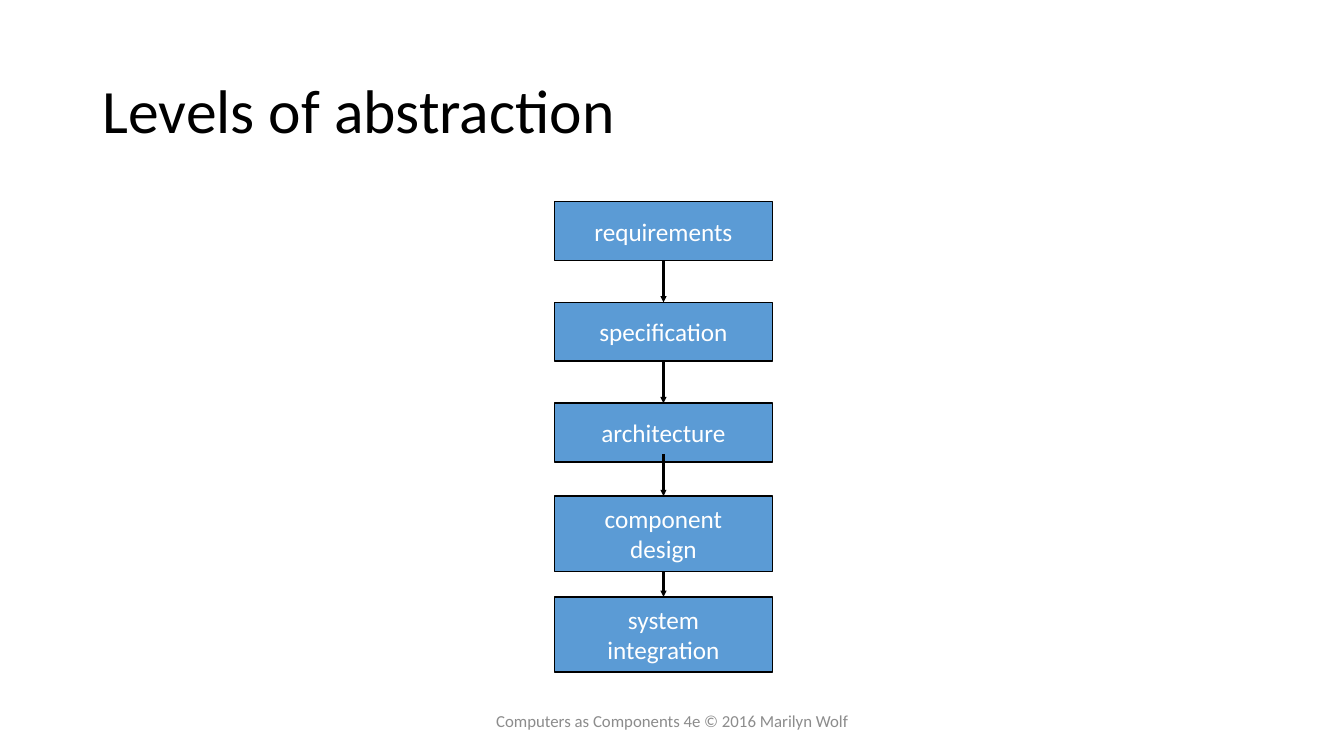
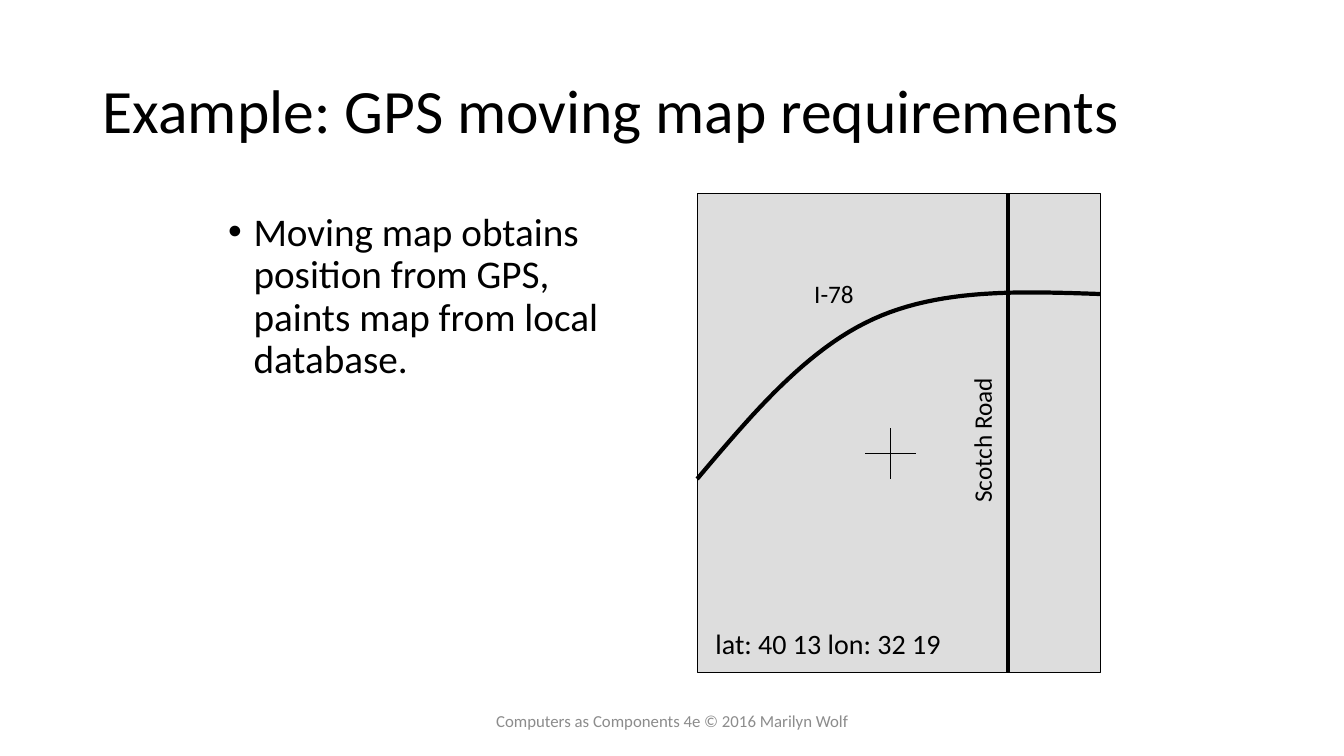
from dataclasses import dataclass

from lxml import etree
from pptx import Presentation
from pptx.dml.color import RGBColor
from pptx.enum.shapes import MSO_CONNECTOR, MSO_SHAPE
from pptx.enum.text import MSO_ANCHOR, MSO_AUTO_SIZE, PP_ALIGN
from pptx.oxml.ns import qn
from pptx.util import Cm, Pt

LEFT, MID = PP_ALIGN.LEFT, PP_ALIGN.CENTER
TOP, CORE = MSO_ANCHOR.TOP, MSO_ANCHOR.MIDDLE
FIT, FIXED = MSO_AUTO_SIZE.SHAPE_TO_FIT_TEXT, MSO_AUTO_SIZE.NONE
RECT, LINE = MSO_SHAPE.RECTANGLE, MSO_CONNECTOR.STRAIGHT

# Shared style
FONT = "Calibri"
BLACK, WHITE, BLUE, PALE, GREY = "000000", "FFFFFF", "5B9BD5", "DDDDDD", "8C8C8C"
FOOT = "Computers as Components 4e © 2016 Marilyn Wolf"


@dataclass
class Box:
    x: float
    y: float
    w: float
    h: float

    def cm(self) -> tuple:
        return Cm(self.x), Cm(self.y), Cm(self.w), Cm(self.h)


@dataclass
class Step:
    text: str
    top: float
    high: float
    run: float = 0  # length of the arrow that ends at this step


@dataclass
class Label:
    text: str
    box: Box
    size: int = 18
    turn: int = 0


TITLE = Box(2.34, 1.02, 29.21, 3.68)
BASE = Box(11.23, 17.65, 11.43, 1.02)


def paint(form, tint: str) -> None:
    """Give a fill or font colour format a solid colour."""
    form.rgb = RGBColor.from_string(tint)


def stroke(shape, width: float) -> None:
    paint(shape.line.color, BLACK)
    shape.line.width = Pt(width)


def write(shape, text: str, size: int, tint: str = BLACK, align=LEFT,
          anchor=TOP, wrap: bool = True, fit=FIXED, lead: float = 1.0,
          gap: int = 0, mark: str = "") -> None:
    """Set one paragraph per line of text."""
    frame = shape.text_frame
    frame.word_wrap, frame.auto_size, frame.vertical_anchor = wrap, fit, anchor
    for num, part in enumerate(text.split("\n")):
        para = frame.add_paragraph() if num else frame.paragraphs[0]
        para.alignment, para.line_spacing, para.space_before = align, lead, Pt(gap)
        run = para.add_run()
        run.text = part
        run.font.name, run.font.size = FONT, Pt(size)
        paint(run.font.color, tint)
        if mark:
            props = para._p.get_or_add_pPr()
            props.set("marL", str(Cm(0.64)))
            props.set("indent", str(Cm(-0.64)))
            font = etree.SubElement(props, qn("a:buFont"))
            font.set("typeface", "Arial")
            etree.SubElement(props, qn("a:buChar")).set("char", mark)


def note(slide, box: Box, text: str, size: int, turn: int = 0, **form) -> None:
    shape = slide.shapes.add_textbox(*box.cm())
    shape.rotation = turn
    write(shape, text, size, **form)


def block(slide, box: Box, fill: str, width: float):
    shape = slide.shapes.add_shape(RECT, *box.cm())
    shape.shadow.inherit = False
    shape.fill.solid()
    paint(shape.fill.fore_color, fill)
    stroke(shape, width)
    return shape


def rule(slide, x1: float, y1: float, x2: float, y2: float,
         width: float, arrow: bool = False) -> None:
    line = slide.shapes.add_connector(LINE, Cm(x1), Cm(y1), Cm(x2), Cm(y2))
    stroke(line, width)
    if arrow:
        tip = etree.SubElement(line.line._get_or_add_ln(), qn("a:tailEnd"))
        for key, val in (("type", "triangle"), ("w", "sm"), ("len", "sm")):
            tip.set(key, val)
    etree.SubElement(line._element.spPr, qn("a:effectLst"))


def curve(slide, start: tuple, bends: list, width: float, steps: int = 24) -> None:
    """Draw joined cubic curves, each bend being two handles and an end."""
    dots, a = [], start
    for b, c, d in bends:
        for num in range(1, steps + 1):
            t = num / steps
            u = 1 - t
            dots.append(tuple(
                Cm(u**3 * p + 3 * u * u * t * q + 3 * u * t * t * r + t**3 * s)
                for p, q, r, s in zip(a, b, c, d)))
        a = d
    path = slide.shapes.build_freeform(Cm(start[0]), Cm(start[1]))
    path.add_line_segments(dots, close=False)
    shape = path.convert_to_shape()
    shape.shadow.inherit = False
    shape.fill.background()
    stroke(shape, width)


def page(deck, title: str):
    """Add a slide with the shared title and footer."""
    slide = deck.slides.add_slide(deck.slide_layouts[6])
    note(slide, TITLE, title, 44, anchor=CORE, lead=0.9)
    note(slide, BASE, FOOT, 12, tint=GREY, align=MID, anchor=CORE)
    return slide


def levels(deck) -> None:
    slide = page(deck, "Levels of abstraction")
    left, wide = 13.97, 5.5
    steps = [
        Step("requirements", 5.08, 1.48),
        Step("specification", 7.62, 1.48, 1.06),
        Step("architecture", 10.16, 1.48, 1.06),
        Step("component\ndesign", 12.5, 1.9, 1.06),
        Step("system\nintegration", 15.04, 1.9, 0.64),
    ]
    for step in steps:
        shape = block(slide, Box(left, step.top, wide, step.high), BLUE, 1)
        write(shape, step.text, 18, tint=WHITE, align=MID, anchor=CORE, wrap=False)
    # Arrows lie over the boxes
    mid = left + wide / 2
    for step in steps[1:]:
        rule(slide, mid, step.top - step.run, mid, step.top, 2.25, arrow=True)


def map_page(deck) -> None:
    slide = page(deck, "Example: GPS moving map requirements")
    note(slide, Box(5.5, 5.23, 10.59, 11.58),
         "Moving map obtains position from GPS, paints map from local database.",
         28, lead=0.9, gap=10, mark="•")
    # Map and roads
    area = Box(17.57, 4.87, 10.16, 12.07)
    block(slide, area, PALE, 0.75)
    rule(slide, 25.4, area.y, 25.4, area.y + area.h, 3)
    curve(slide, (area.x, 12.07), [
        ((18.95, 10.44), (20.32, 8.81), (22.01, 8.04)),
        ((23.7, 7.27), (25.7, 7.34), (area.x + area.w, 7.41)),
    ], 3)
    # Cross at the current place
    x, y, arm = 22.44, 11.43, 0.64
    rule(slide, x, y - arm, x, y + arm, 0.75)
    rule(slide, x - arm, y, x + arm, y, 0.75)
    # Map labels
    for item in (
        Label("lat: 40 13 lon: 32 19", Box(17.78, 15.67, 6.2, 1.09), 20),
        Label("I-78", Box(20.27, 6.88, 1.52, 1.02)),
        Label("Scotch Road", Box(22.91, 10.57, 3.68, 1.02), turn=270),
    ):
        note(slide, item.box, item.text, item.size, item.turn, wrap=False, fit=FIT)


def main() -> None:
    deck = Presentation()
    deck.slide_width, deck.slide_height = Cm(33.87), Cm(19.05)
    levels(deck)
    map_page(deck)
    deck.save("out.pptx")


if __name__ == "__main__":
    main()
